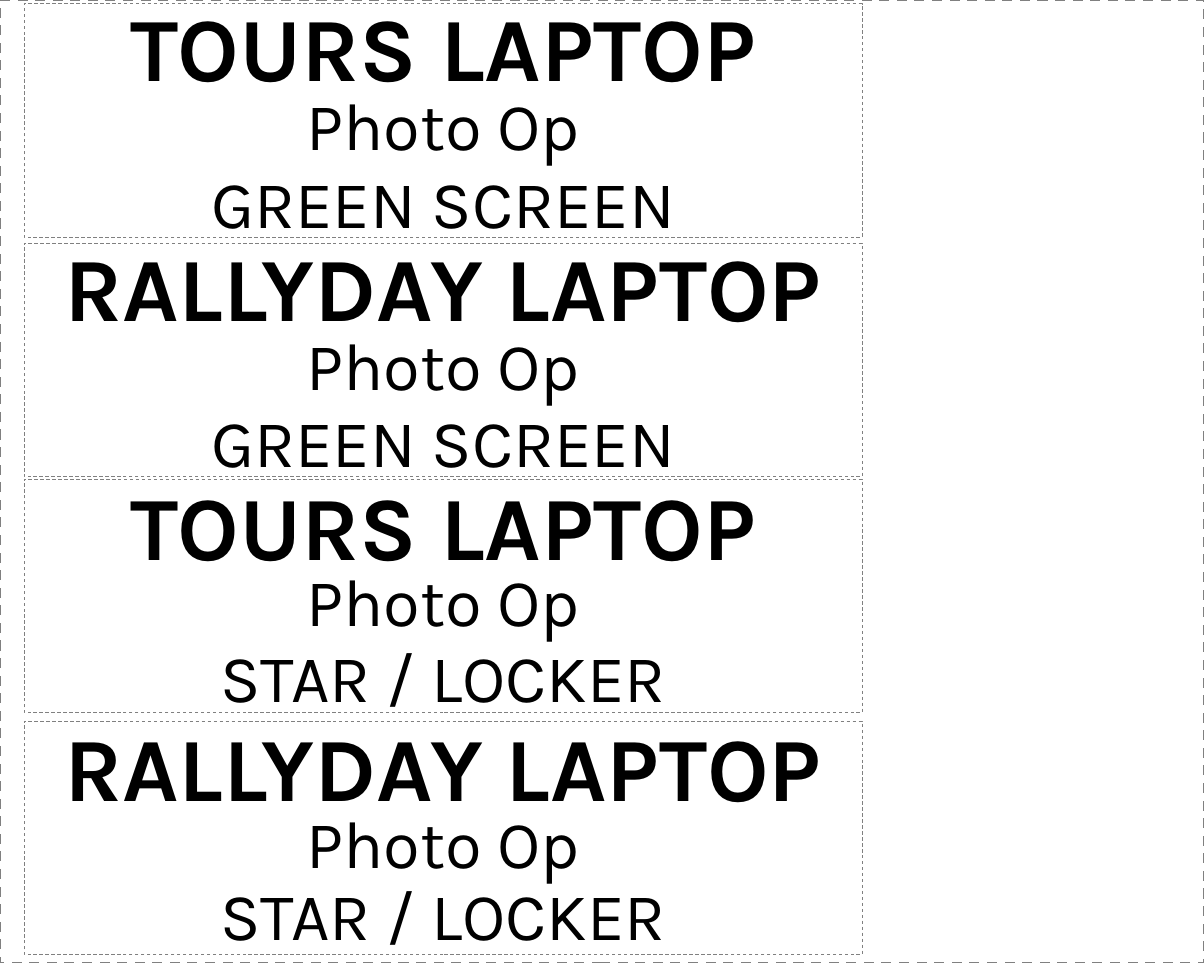
import pptx
import pptx.dml.color
import pptx.enum.dml
import pptx.enum.shapes
import pptx.enum.text
import pptx.util

Inches = pptx.util.Inches
Pt = pptx.util.Pt
ANCHOR = pptx.enum.text.MSO_ANCHOR

SLIDE_WIDTH, SLIDE_HEIGHT = 10, 8
LABEL_LEFT, LABEL_WIDTH, LABEL_HEIGHT = 0.2, 6.96, 1.94
LINE_HEIGHT, BACKDROP_HEIGHT = 0.9, 0.5
ACTIVITY_OFFSET = 0.62

TITLE_FORMAT = {"name": "Karla", "size": Pt(54), "bold": True}
DETAIL_FORMAT = {"name": "Karla", "size": Pt(40), "bold": False}

# Label top, laptop, backdrop, then offsets of the title top and backdrop top
LABELS = [
    (0.03, "TOURS LAPTOP", "GREEN SCREEN", -0.15, 1.4),
    (2.02, "RALLYDAY LAPTOP", "GREEN SCREEN", -0.15, 1.39),
    (3.98, "TOURS LAPTOP", "STAR / LOCKER", -0.12, 1.38),
    (5.99, "RALLYDAY LAPTOP", "STAR / LOCKER", -0.13, 1.35),
]


def color(hex_value):
    return pptx.dml.color.RGBColor.from_string(hex_value)


def add_frame(slide, left, top, width, height, line_width, fill=None):
    frame = slide.shapes.add_shape(
        pptx.enum.shapes.MSO_SHAPE.RECTANGLE,
        Inches(left), Inches(top), Inches(width), Inches(height))
    frame.shadow.inherit = False
    if fill:
        frame.fill.solid()
        frame.fill.fore_color.rgb = color(fill)
    else:
        frame.fill.background()
    frame.line.color.rgb = color("808080")
    frame.line.width = Pt(line_width)
    frame.line.dash_style = pptx.enum.dml.MSO_LINE.DASH


def add_line_of_text(slide, wording, left, top, width, height, font_format,
                     anchor):
    text_box = slide.shapes.add_textbox(
        Inches(left), Inches(top), Inches(width), Inches(height))
    text_frame = text_box.text_frame
    text_frame.word_wrap = False
    text_frame.vertical_anchor = anchor
    paragraph = text_frame.paragraphs[0]
    paragraph.alignment = pptx.enum.text.PP_ALIGN.CENTER
    run = paragraph.add_run()
    run.text = wording
    for attribute, value in font_format.items():
        setattr(run.font, attribute, value)
    run.font.color.rgb = color("000000")


def add_label(slide, left, top, width, height, laptop, backdrop,
              title_offset, backdrop_offset):
    add_frame(slide, left, top, width, height, 0.5)
    lines = [
        (laptop, title_offset, LINE_HEIGHT, TITLE_FORMAT, ANCHOR.TOP),
        ("Photo Op", ACTIVITY_OFFSET, LINE_HEIGHT, DETAIL_FORMAT, ANCHOR.TOP),
        (backdrop, backdrop_offset, BACKDROP_HEIGHT, DETAIL_FORMAT,
         ANCHOR.MIDDLE),
    ]
    for wording, offset, line_height, font_format, anchor in lines:
        add_line_of_text(slide, wording, left, top + offset, width,
                         line_height, font_format, anchor)


def main():
    presentation = pptx.Presentation()
    presentation.slide_width = Inches(SLIDE_WIDTH)
    presentation.slide_height = Inches(SLIDE_HEIGHT)
    slide = presentation.slides.add_slide(presentation.slide_layouts[6])

    # Sheet edge
    add_frame(slide, 0, 0, SLIDE_WIDTH, SLIDE_HEIGHT, 1.5, "FFFFFF")

    # Laptop labels
    for top, *content in LABELS:
        add_label(slide, LABEL_LEFT, top, LABEL_WIDTH, LABEL_HEIGHT, *content)

    presentation.save("out.pptx")


if __name__ == "__main__":
    main()
